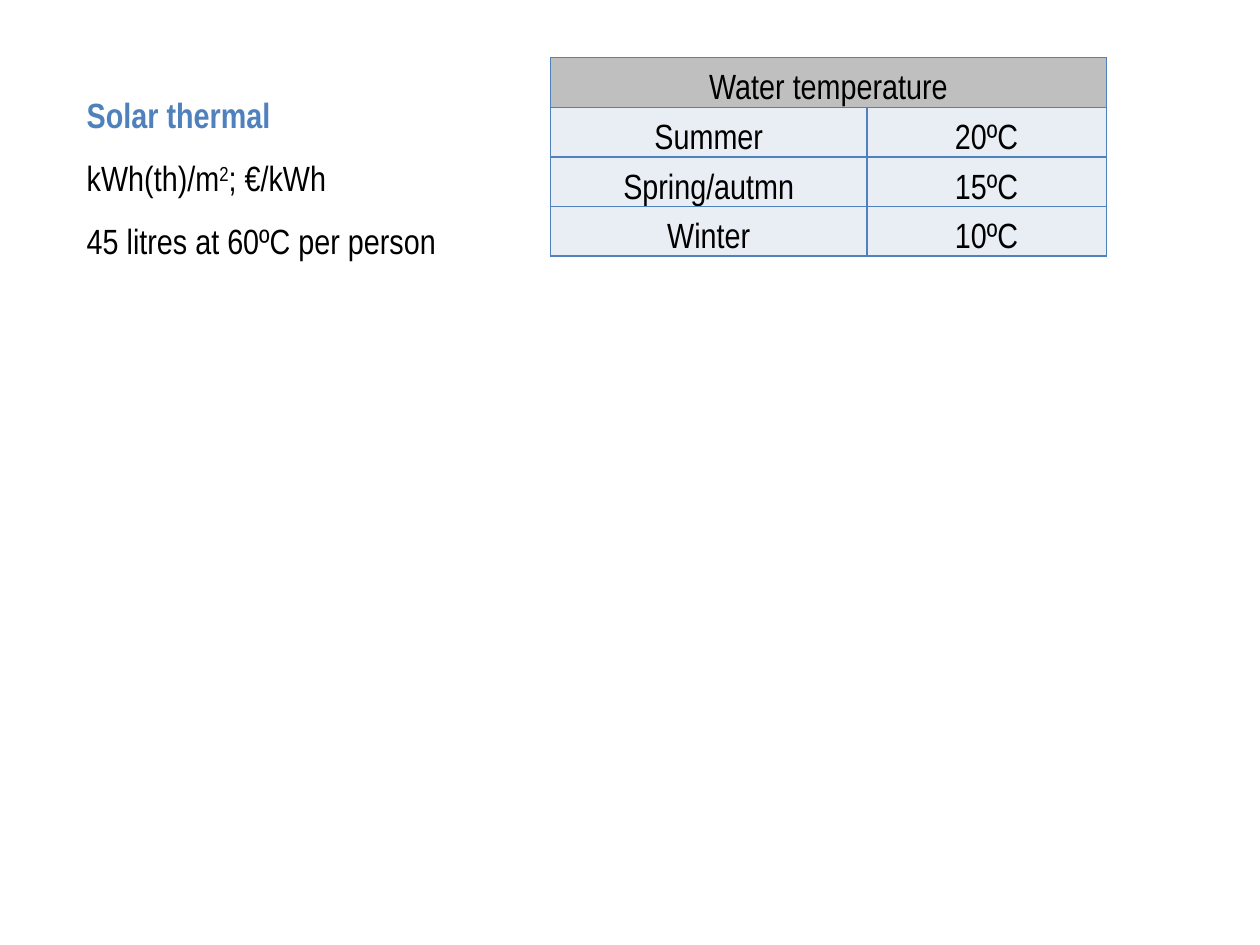
from pptx import Presentation
from pptx.dml.color import RGBColor
from pptx.enum.text import MSO_ANCHOR, MSO_AUTO_SIZE, PP_ALIGN
from pptx.oxml import parse_xml
from pptx.oxml.ns import nsdecls
from pptx.util import Inches, Pt

COLORS = {"accent": "4F81BD", "text": "000000", "header": "BFBFBF", "body": "E9EDF4"}
FONT, SIZE, SPACING = "Arial Narrow", 20, 1.5
WIDTH, HEIGHT = 10, 7.5

NOTES = [
    [("Solar thermal", "title")],
    [("kWh(th)/m", "plain"), ("2", "super"), ("; €/kWh", "plain")],
    [("45 litres at 60ºC per person", "plain")],
]
TEMPERATURES = [
    ("Water temperature", None),
    ("Summer", "20ºC"),
    ("Spring/autmn", "15ºC"),
    ("Winter", "10ºC"),
]
NOTES_BOX = (0.059, 0.069, 0.563, 0.216)
TABLE_LEFT, TABLE_TOP = 0.437, 0.061
COLUMNS, ROW = (0.251, 0.19), 0.0525


def across(share):
    return Inches(WIDTH * share)


def down(share):
    return Inches(HEIGHT * share)


def add_run(p, text, style="plain"):
    r = p.add_run()
    r.text = text
    r.font.name, r.font.size = FONT, Pt(SIZE)
    r.font.bold = style == "title"
    color = "accent" if style == "title" else "text"
    r.font.color.rgb = RGBColor.from_string(COLORS[color])
    if style == "super":
        r._r.get_or_add_rPr().set("baseline", "30000")


def add_borders(cell):
    tcPr = cell._tc.get_or_add_tcPr()
    for i, side in enumerate(("lnL", "lnR", "lnT", "lnB")):
        tcPr.insert(i, parse_xml(
            f'<a:{side} {nsdecls("a")} w="{Pt(1)}"><a:solidFill>'
            f'<a:srgbClr val="{COLORS["accent"]}"/></a:solidFill></a:{side}>'))


def add_table(s):
    frame = s.shapes.add_table(
        len(TEMPERATURES), len(COLUMNS), across(TABLE_LEFT), down(TABLE_TOP),
        across(sum(COLUMNS)), down(ROW * len(TEMPERATURES)))
    table = frame.table
    for column, share in zip(table.columns, COLUMNS):
        column.width = across(share)
    table.cell(0, 0).merge(table.cell(0, 1))
    for i, values in enumerate(TEMPERATURES):
        table.rows[i].height = down(ROW)
        for j, value in enumerate(values):
            cell = table.cell(i, j)
            cell.margin_left = cell.margin_right = Inches(0.07)
            cell.margin_top = cell.margin_bottom = 0
            cell.vertical_anchor = MSO_ANCHOR.MIDDLE if i else MSO_ANCHOR.TOP
            cell.fill.solid()
            cell.fill.fore_color.rgb = RGBColor.from_string(COLORS["body" if i else "header"])
            add_borders(cell)
            if value:
                p = cell.text_frame.paragraphs[0]
                p.alignment, p.line_spacing = PP_ALIGN.CENTER, SPACING
                add_run(p, value)


def add_notes(s):
    left, top, width, height = NOTES_BOX
    sp = s.shapes.add_textbox(across(left), down(top), across(width), down(height))
    tf = sp.text_frame
    tf.word_wrap = True
    tf.auto_size = MSO_AUTO_SIZE.SHAPE_TO_FIT_TEXT
    tf.vertical_anchor = MSO_ANCHOR.MIDDLE
    for i, runs in enumerate(NOTES):
        p = tf.add_paragraph() if i else tf.paragraphs[0]
        p.line_spacing = SPACING
        for text, style in runs:
            add_run(p, text, style)


def main():
    prs = Presentation()
    prs.slide_width, prs.slide_height = Inches(WIDTH), Inches(HEIGHT)
    s = prs.slides.add_slide(prs.slide_layouts[6])
    add_table(s)
    add_notes(s)
    prs.save("out.pptx")


if __name__ == "__main__":
    main()
